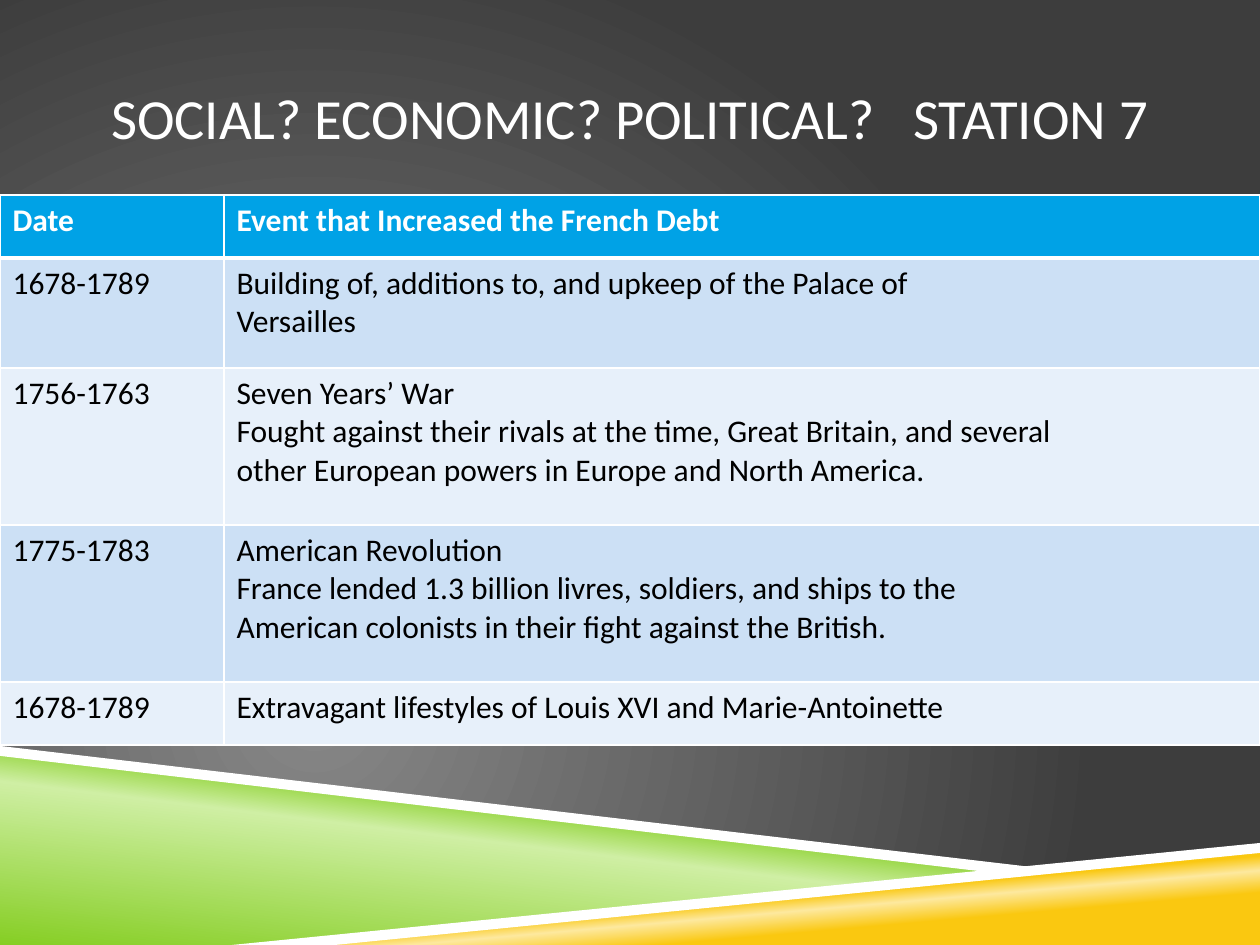
from pptx import Presentation
from pptx.dml.color import RGBColor
from pptx.enum.text import MSO_ANCHOR, PP_ALIGN
from pptx.oxml import parse_xml
from pptx.oxml.ns import qn
from pptx.util import Emu, Pt

MIDDLE = MSO_ANCHOR.MIDDLE
CENTER = PP_ALIGN.CENTER
PX = 914400 / 126
NS = 'xmlns:a="http://schemas.openxmlformats.org/drawingml/2006/main"'
FONT = "Calibri"
HUES = {
    "white": "FFFFFF", "black": "000000", "ash": "878787", "coal": "3D3D3D",
    "green": "86CE24", "mint": "CFEFA4", "gold": "FAC810", "cream": "FDE99F",
    "head": "00A2E6", "odd": "CCE0F5", "even": "E7F0FA",
}


def shade(fill, root, stops, way):
    fill.gradient()
    old = root.find(".//" + qn("a:gradFill"))
    marks = "".join(
        f'<a:gs pos="{pos * 1000}"><a:srgbClr val="{HUES[hue]}"/></a:gs>'
        for pos, hue in stops)
    new = parse_xml(f'<a:gradFill {NS} rotWithShape="1">'
                    f'<a:gsLst>{marks}</a:gsLst>{way}</a:gradFill>')
    old.getparent().replace(old, new)


def write(para, text, size, hue, bold=False):
    run = para.add_run()
    run.text = text
    run.font.name = FONT
    run.font.size = Pt(size)
    run.font.bold = bold
    run.font.color.rgb = RGBColor.from_string(HUES[hue])


deck = Presentation()
deck.slide_width = Emu(round(1260 * PX))
deck.slide_height = Emu(round(945 * PX))
slide = deck.slides.add_slide(deck.slide_layouts[5])

shade(slide.background.fill, slide.element, [(0, "ash"), (100, "coal")],
      '<a:path path="circle">'
      '<a:fillToRect l="50000" t="100000" r="100000" b="50000"/></a:path>')

bands = [
    ([(0, 752), (998, 872), (252, 945), (0, 945)],
     [(0, "green"), (52, "mint"), (66, "green")], 277),
    ([(249, 945), (1260, 847), (1260, 945)],
     [(28, "gold"), (40, "cream"), (48, "gold")], 265),
    ([(0, 746), (0, 756), (995, 873), (1048, 869)], None, 0),
    ([(1260, 843), (232, 945), (335, 945), (1260, 853)], None, 0),
]
for dots, stops, angle in bands:
    path = slide.shapes.build_freeform(*dots[0], scale=PX)
    path.add_line_segments(dots[1:], close=True)
    band = path.convert_to_shape()
    band.shadow.inherit = False
    band.line.fill.background()
    if stops:
        shade(band.fill, band.element, stops,
              f'<a:lin ang="{angle * 60000}" scaled="0"/>')
    else:
        band.fill.solid()
        band.fill.fore_color.rgb = RGBColor.from_string(HUES["white"])

title = slide.shapes.title
title.left, title.top, title.width, title.height = [
    Emu(round(n * PX)) for n in (0, 38, 1260, 157)]
frame = title.text_frame
frame.word_wrap = True
frame.vertical_anchor = MIDDLE
frame.margin_left = frame.margin_right = 0
frame.margin_top = frame.margin_bottom = Emu(round(6 * PX))
para = frame.paragraphs[0]
para.alignment = CENTER
write(para, "SOCIAL? ECONOMIC? POLITICAL?   STATION 7", 32.4, "white")

rows = [
    (63, "Date", ["Event that Increased the French Debt"]),
    (110, "1678-1789", ["Building of, additions to, and upkeep of the Palace of",
                        "Versailles"]),
    (157, "1756-1763", [
        "Seven Years’ War",
        "Fought against their rivals at the time, Great Britain, and several",
        "other European powers in Europe and North America."]),
    (157, "1775-1783", [
        "American Revolution",
        "France lended 1.3 billion livres, soldiers, and ships to the",
        "American colonists in their fight against the British."]),
    (63, "1678-1789", ["Extravagant lifestyles of Louis XVI and Marie-Antoinette"]),
]
spot = [Emu(round(n * PX)) for n in (0, 195, 1260, 550)]
table = slide.shapes.add_table(len(rows), 2, *spot).table
for col, width in zip(table.columns, (224, 1036)):
    col.width = Emu(round(width * PX))

for r, (height, date, event) in enumerate(rows):
    table.rows[r].height = Emu(round(height * PX))
    hue = "head" if r == 0 else "odd" if r % 2 else "even"
    for c, lines in enumerate(([date], event)):
        cell = table.cell(r, c)
        cell.fill.solid()
        cell.fill.fore_color.rgb = RGBColor.from_string(HUES[hue])
        for i, line in enumerate(lines):
            body = cell.text_frame
            para = body.add_paragraph() if i else body.paragraphs[0]
            write(para, line, 18, "black" if r else "white", r == 0)
        edges = cell._tc.get_or_add_tcPr()
        for i, side in enumerate("LRTB"):
            thick = 3 if (r, side) in ((0, "B"), (1, "T")) else 1
            edges.insert(i, parse_xml(
                f'<a:ln{side} {NS} w="{Pt(thick)}"><a:solidFill>'
                f'<a:srgbClr val="{HUES["white"]}"/></a:solidFill></a:ln{side}>'))

deck.save("out.pptx")
